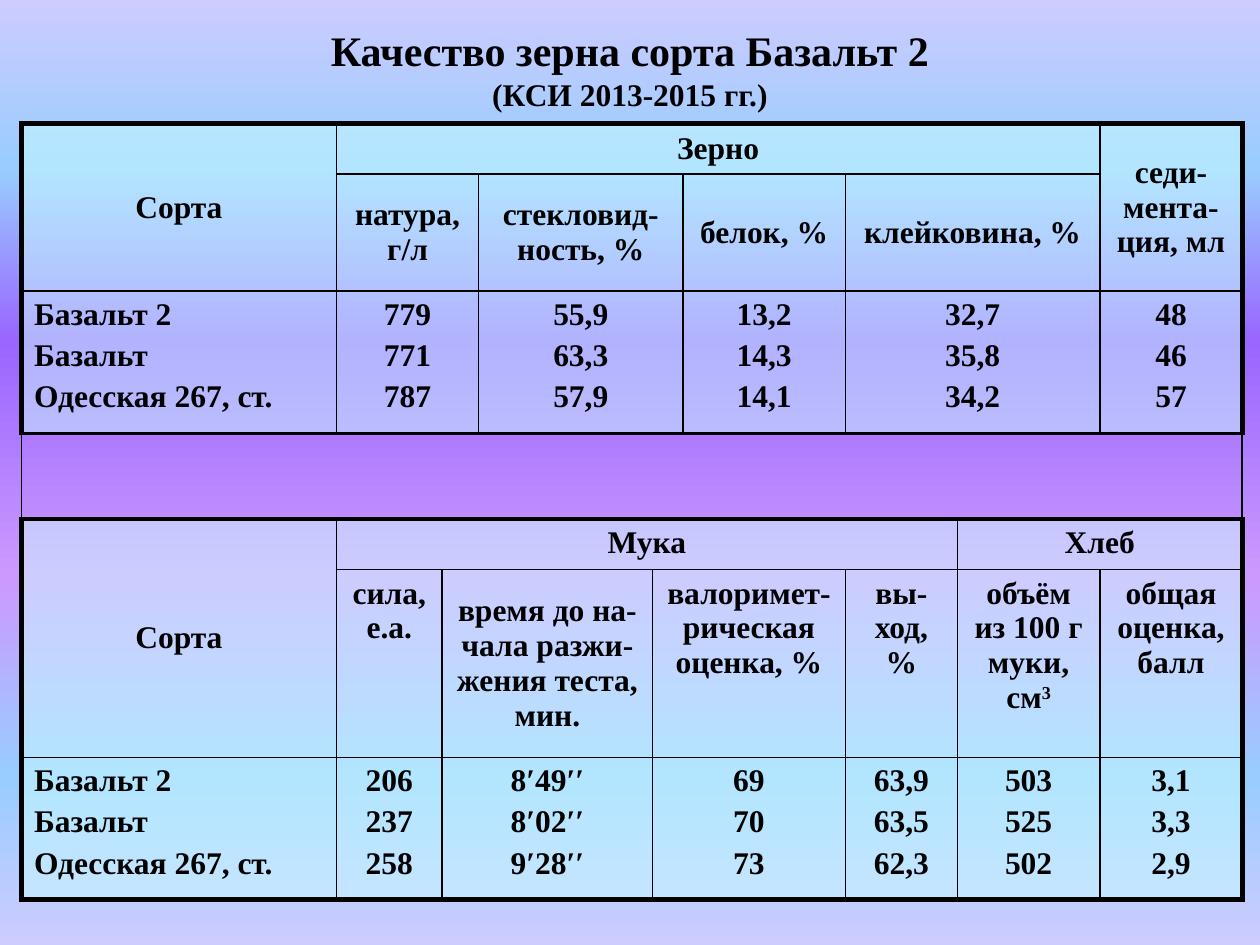
"""Build a slide with grain, flour and bread quality figures for wheat varieties."""
from copy import deepcopy
from dataclasses import dataclass
from itertools import accumulate

from lxml import etree
from pptx import Presentation
from pptx.dml import color
from pptx.enum import text
from pptx.oxml import ns
from pptx import util as u

MIDDLE, TOP = text.MSO_ANCHOR.MIDDLE, text.MSO_ANCHOR.TOP
CENTER, LEFT = text.PP_ALIGN.CENTER, text.PP_ALIGN.LEFT


@dataclass(frozen=True)
class Theme:
    font: str = "Times New Roman"
    ink: str = "000000"
    cell: str = "CCFFFF"
    cell_alpha: int = 50
    title_size: int = 24
    body_size: int = 18
    paragraph_gap: float = 3.6
    thin: float = 1
    medium: float = 2.25
    thick: float = 3
    gradient: tuple = ((0, "CCCCFF"), (18, "99CCFF"), (36, "9966FF"),
                       (61, "CC99FF"), (82, "99CCFF"), (100, "CCCCFF"))


THEME = Theme()
COLUMNS = (2.5, 0.84, 0.29, 1.38, 0.24, 1.29, 0.89, 1.13, 1.13)
ROWS = (0.4, 0.69, 1.13, 0.68, 0.4, 1.49, 1.13)
GAP_ROW = 3
ROW_RULES = (THEME.thick, THEME.thin, THEME.thin, THEME.medium,
             THEME.medium, THEME.thin, THEME.thin, THEME.thick)
VARIETIES = "Базальт 2\nБазальт\nОдесская 267, ст."

# row, column, row span, column span, text, anchor
HEADERS = (
    (0, 0, 2, 1, "Сорта", MIDDLE),
    (0, 1, 1, 7, "Зерно", MIDDLE),
    (0, 8, 2, 1, "седи-мента-ция, мл", MIDDLE),
    (4, 0, 2, 1, "Сорта", MIDDLE),
    (4, 1, 1, 6, "Мука", TOP),
    (4, 7, 1, 2, "Хлеб", TOP),
)
# column span, heading, anchor, values
GRAIN = (
    (2, "натура, г/л", MIDDLE, "779\n771\n787"),
    (2, "стекловид-ность, %", MIDDLE, "55,9\n63,3\n57,9"),
    (1, "белок, %", MIDDLE, "13,2\n14,3\n14,1"),
    (2, "клейковина, %", MIDDLE, "32,7\n35,8\n34,2"),
    (1, None, MIDDLE, "48\n46\n57"),
)
FLOUR_AND_BREAD = (
    (1, "сила, е.а.", TOP, "206\n237\n258"),
    (2, "время до на-чала разжи-жения теста, мин.", MIDDLE, "8′49′′\n8′02′′\n9′28′′"),
    (2, "валоримет- рическая оценка, %", TOP, "69\n70\n73"),
    (1, "вы-ход, %", TOP, "63,9\n63,5\n62,3"),
    (1, "объём из 100 г муки, см^3", TOP, "503\n525\n502"),
    (1, "общая оценка, балл", TOP, "3,1\n3,3\n2,9"),
)


class SlideBuilder:
    """Hold the theme and the current slide and add elements to it."""

    def __init__(self, slide, theme):
        self.slide, self.theme = slide, theme

    def background(self):
        """Fill the background with the vertical theme gradient."""
        fill = self.slide.background.fill
        fill.gradient()
        fill.gradient_angle = 270
        stops = next(self.slide.element.iter(ns.qn("a:gsLst")))
        for stop in list(stops)[1:]:
            stops.remove(stop)
        for _ in self.theme.gradient[1:]:
            stops.append(deepcopy(stops[0]))
        for stop, (position, value) in zip(fill.gradient_stops, self.theme.gradient):
            stop.position = position / 100
            stop.color.rgb = color.RGBColor.from_string(value)

    def run(self, paragraph, content, size):
        """Add a bold run in the theme font."""
        run = paragraph.add_run()
        run.text = content
        values = {"name": self.theme.font, "size": u.Pt(size), "bold": True}
        for name, value in values.items():
            setattr(run.font, name, value)
        run.font.color.rgb = color.RGBColor.from_string(self.theme.ink)
        return run

    def title(self, heading, subtitle, left, top, width, height):
        """Place the title placeholder with its two lines."""
        shape = self.slide.shapes.title
        box = {"left": left, "top": top, "width": width, "height": height}
        for name, value in box.items():
            setattr(shape, name, u.Inches(value))
        shape.text_frame.vertical_anchor = MIDDLE
        paragraph = shape.text_frame.paragraphs[0]
        paragraph.alignment = CENTER
        self.run(paragraph, heading, self.theme.title_size)
        paragraph.add_line_break()
        self.run(paragraph, subtitle, self.theme.body_size)

    def table(self, left, top, columns, rows):
        """Add a plain table with the given column widths and row heights."""
        frame = self.slide.shapes.add_table(
            len(rows), len(columns), u.Inches(left), u.Inches(top),
            u.Inches(sum(columns)), u.Inches(sum(rows)))
        table = frame.table
        table.first_row = table.horz_banding = False
        for column, width in zip(table.columns, columns):
            column.width = u.Inches(width)
        for row, height in zip(table.rows, rows):
            row.height = u.Inches(height)
        return table

    def cell(self, table, row, column, row_span, column_span, content, anchor, align=CENTER):
        """Merge the spanned cells and write the content, ^ marking a superscript."""
        cell = table.cell(row, column)
        if row_span * column_span > 1:
            cell.merge(table.cell(row + row_span - 1, column + column_span - 1))
        cell.vertical_anchor = anchor
        for index, line in enumerate(content.split("\n")):
            frame = cell.text_frame
            paragraph = frame.add_paragraph() if index else frame.paragraphs[0]
            paragraph.alignment = align
            if index:
                paragraph.space_before = u.Pt(self.theme.paragraph_gap)
            base, _, raised = line.partition("^")
            self.run(paragraph, base, self.theme.body_size)
            if raised:
                run = self.run(paragraph, raised, self.theme.body_size)
                run.font._element.set("baseline", "30000")

    def cell_style(self, cell, filled, borders):
        """Set the translucent fill and the left, right, top and bottom borders."""
        properties = cell._tc.get_or_add_tcPr()
        if filled:
            cell.fill.solid()
            cell.fill.fore_color.rgb = color.RGBColor.from_string(self.theme.cell)
            tint = next(properties.iter(ns.qn("a:srgbClr")))
            etree.SubElement(tint, ns.qn("a:alpha"), val=str(self.theme.cell_alpha * 1000))
        else:
            cell.fill.background()
        for index, (side, width) in enumerate(zip("LRTB", borders)):
            line = etree.Element(ns.qn(f"a:ln{side}"), w=str(u.Pt(width)))
            solid = etree.SubElement(line, ns.qn("a:solidFill"))
            etree.SubElement(solid, ns.qn("a:srgbClr"), val=self.theme.ink)
            properties.insert(index, line)

    def grid_style(self, table):
        """Style every cell according to its place in the grid."""
        for row in range(len(ROWS)):
            outer = self.theme.thin if row == GAP_ROW else self.theme.thick
            for column in range(len(COLUMNS)):
                cell = table.cell(row, column)
                height = cell.span_height if cell.is_merge_origin else 1
                width = cell.span_width if cell.is_merge_origin else 1
                borders = (outer if column == 0 else self.theme.thin,
                           outer if column + width == len(COLUMNS) else self.theme.thin,
                           ROW_RULES[row], ROW_RULES[row + height])
                self.cell_style(cell, row != GAP_ROW, borders)


def main():
    """Create the presentation and save it."""
    presentation = Presentation()
    presentation.slide_width, presentation.slide_height = u.Inches(10), u.Inches(7.5)
    slide = presentation.slides.add_slide(presentation.slide_layouts[5])
    builder = SlideBuilder(slide, THEME)
    builder.background()
    builder.title("Качество зерна сорта Базальт 2", "(КСИ 2013-2015 гг.)", 0.25, 0.17, 9.5, 0.75)
    table = builder.table(0.17, 0.98, COLUMNS, ROWS)
    for header in HEADERS:
        builder.cell(table, *header)
    for row, section in ((1, GRAIN), (5, FLOUR_AND_BREAD)):
        builder.cell(table, row + 1, 0, 1, 1, VARIETIES, TOP, LEFT)
        starts = accumulate((span for span, *_ in section), initial=1)
        for column, (span, heading, anchor, values) in zip(starts, section):
            if heading:
                builder.cell(table, row, column, 1, span, heading, anchor)
            builder.cell(table, row + 1, column, 1, span, values, TOP)
    table.cell(GAP_ROW, 0).merge(table.cell(GAP_ROW, len(COLUMNS) - 1))
    builder.grid_style(table)
    presentation.save("out.pptx")


if __name__ == "__main__":
    main()
